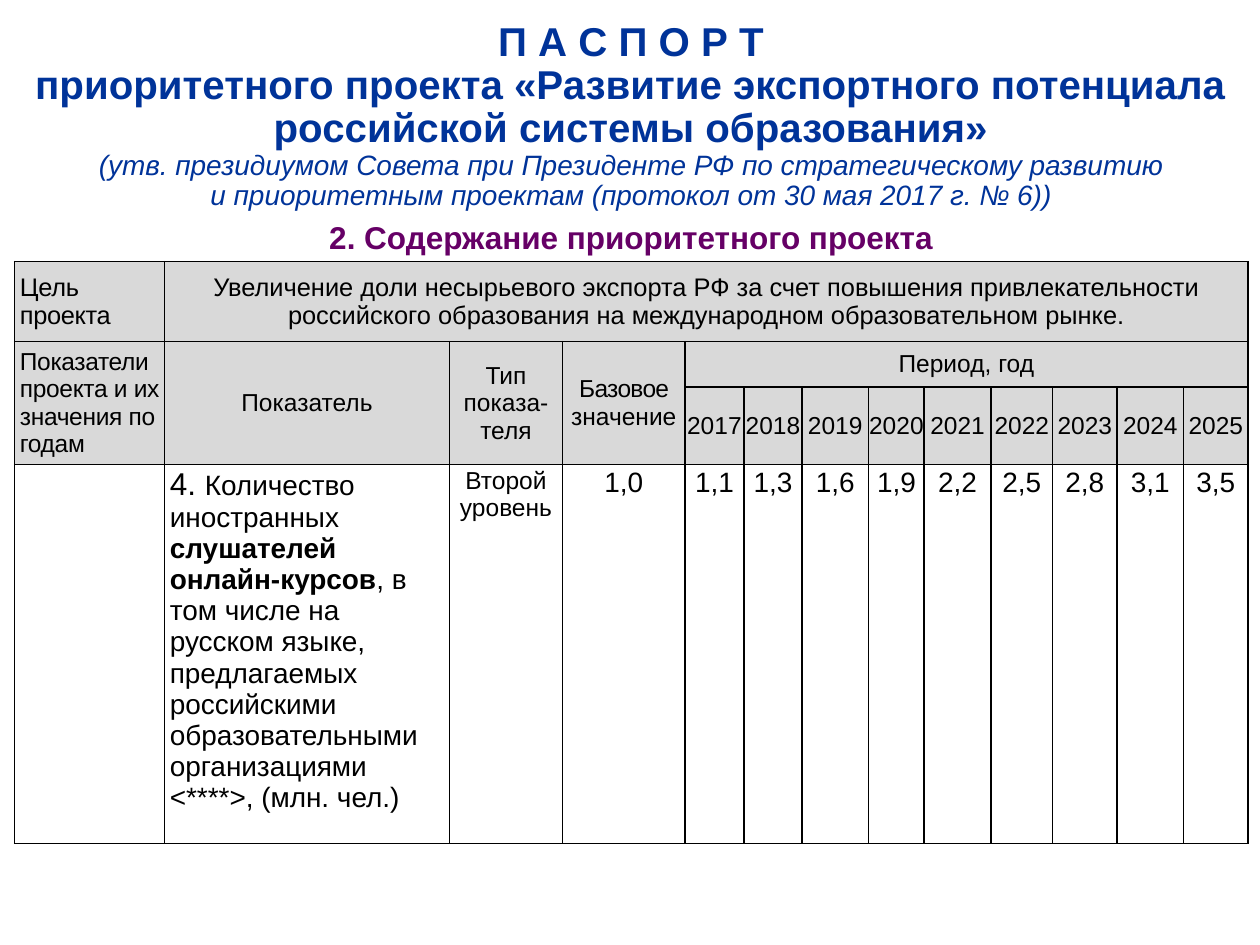
from lxml import etree
from pptx import Presentation
from pptx import util as u
from pptx.dml.color import RGBColor
from pptx.enum import text
from pptx.oxml import ns

Pt = u.Pt
BLUE = RGBColor(0x00, 0x33, 0x99)
PURPLE = RGBColor(0x66, 0x00, 0x66)
BLACK = RGBColor(0x00, 0x00, 0x00)
GREY = RGBColor(0xD9, 0xD9, 0xD9)
LEFT, CENTER = text.PP_ALIGN.LEFT, text.PP_ALIGN.CENTER
TOP, MIDDLE = text.MSO_ANCHOR.TOP, text.MSO_ANCHOR.MIDDLE

HEADING = dict(size=Pt(23), bold=True)
APPROVAL = dict(size=Pt(16), italic=True)
SECTION = dict(size=Pt(18), bold=True)
TITLE = [
    ("П А С П О Р Т", HEADING, BLUE, 0),
    ("приоритетного проекта «Развитие экспортного потенциала российской системы образования»",
     HEADING, BLUE, 0),
    ("(утв. президиумом Совета при Президенте РФ по стратегическому развитию", APPROVAL, BLUE, 0),
    ("и приоритетным проектам (протокол от 30 мая 2017 г. № 6))", APPROVAL, BLUE, 0),
    ("2. Содержание приоритетного проекта", SECTION, PURPLE, 6),
]

COLUMNS = [85.7, 162.7, 64.8, 69.8, 33.8, 33.1, 38.2, 31.7, 38.2, 35.3, 36.7, 38.2, 36.7]
ROWS = [45.7, 25.9, 40.2, 200.5]
FIRST_YEAR_COL = 4
YEARS = range(2017, 2026)
VALUES = ["1,1", "1,3", "1,6", "1,9", "2,2", "2,5", "2,8", "3,1", "3,5"]
INDICATOR = [
    ("4. ", dict(size=Pt(18))),
    ("Количество иностранных ", dict(size=Pt(16))),
    ("слушателей онлайн-курсов", dict(size=Pt(16), bold=True)),
    (", в том числе на русском языке, предлагаемых российскими образовательными "
     "организациями <****>, (млн. чел.)", dict(size=Pt(16))),
]


def add_run(p, words, color, fmt, spacing=0):
    r = p.add_run()
    r.text = words
    r.font.name = "Arial"
    r.font.color.rgb = color
    for name, value in fmt.items():
        setattr(r.font, name, value)
    if spacing:
        r.font._element.set("spc", str(round(spacing * 100)))


def add_title(s, x, y, w, h):
    tf = s.shapes.add_textbox(Pt(x), Pt(y), Pt(w), Pt(h)).text_frame
    tf.word_wrap = True
    for i, (words, fmt, color, before) in enumerate(TITLE):
        p = tf.add_paragraph() if i else tf.paragraphs[0]
        p.alignment, p.line_spacing, p.space_before = CENTER, 0.9, Pt(before)
        add_run(p, words, color, fmt)


def add_borders(cell):
    tc_pr = cell._tc.get_or_add_tcPr()
    for i, side in enumerate(("a:lnL", "a:lnR", "a:lnT", "a:lnB")):
        ln = etree.Element(ns.qn(side), w=str(Pt(1)))
        fill = etree.SubElement(ln, ns.qn("a:solidFill"))
        etree.SubElement(fill, ns.qn("a:srgbClr"), val=str(BLACK))
        tc_pr.insert(i, ln)


def fill_cell(cell, runs, align=CENTER, anchor=MIDDLE, left=0, right=0, pad=1.5):
    """Runs are (words, font format[, letter spacing])."""
    margins = dict(margin_left=left, margin_right=right, margin_top=pad, margin_bottom=pad)
    for name, value in margins.items():
        setattr(cell, name, Pt(value))
    cell.vertical_anchor = anchor
    p = cell.text_frame.paragraphs[0]
    p.alignment = align
    for words, fmt, *spacing in runs:
        add_run(p, words, BLACK, fmt, *spacing)


def add_indicator_table(s, x, y):
    tbl = s.shapes.add_table(len(ROWS), len(COLUMNS), Pt(x), Pt(y),
                             Pt(sum(COLUMNS)), Pt(sum(ROWS))).table
    tbl.first_row = tbl.horz_banding = False
    for col, w in zip(tbl.columns, COLUMNS):
        col.width = Pt(w)
    for i, (row, h) in enumerate(zip(tbl.rows, ROWS)):
        row.height = Pt(h)
        for cell in row.cells:
            if i < 3:
                cell.fill.solid()
                cell.fill.fore_color.rgb = GREY
            else:
                cell.fill.background()
            add_borders(cell)

    last = len(COLUMNS) - 1
    tbl.cell(0, 1).merge(tbl.cell(0, last))
    tbl.cell(1, FIRST_YEAR_COL).merge(tbl.cell(1, last))
    for c in range(FIRST_YEAR_COL):
        tbl.cell(1, c).merge(tbl.cell(2, c))

    goal, head, value = (dict(size=Pt(n)) for n in (14.5, 14, 16))
    fill_cell(tbl.cell(0, 0), [("Цель проекта", goal, -0.2)], LEFT, left=3)
    fill_cell(tbl.cell(0, 1), [("Увеличение доли несырьевого экспорта РФ за счет повышения "
                                "привлекательности российского образования на международном "
                                "образовательном рынке.", goal)])
    fill_cell(tbl.cell(1, 0), [("Показатели проекта и их значения по годам", head, -0.2)],
              LEFT, left=3)
    fill_cell(tbl.cell(1, 1), [("Показатель", head)], left=3, right=3)
    fill_cell(tbl.cell(1, 2), [("Тип показа-теля", head)])
    fill_cell(tbl.cell(1, 3), [("Базовое ", head, -0.4), ("значение", head)])
    fill_cell(tbl.cell(1, FIRST_YEAR_COL), [("Период, год", head)], left=3, right=3, pad=3)

    fill_cell(tbl.cell(3, 1), INDICATOR, LEFT, TOP, left=3, right=3)
    fill_cell(tbl.cell(3, 2), [("Второй уровень", head)], anchor=TOP)
    fill_cell(tbl.cell(3, 3), [("1,0", value)], anchor=TOP, left=3, right=3)
    for c, (year, amount) in enumerate(zip(YEARS, VALUES), FIRST_YEAR_COL):
        fill_cell(tbl.cell(2, c), [(str(year), head)])
        fill_cell(tbl.cell(3, c), [(amount, value)], anchor=TOP)


def main():
    prs = Presentation()
    prs.slide_width, prs.slide_height = Pt(720), Pt(540)
    s = prs.slides.add_slide(prs.slide_layouts[6])
    add_title(s, 0.7, 8.6, 720, 79)
    add_indicator_table(s, 8.4, 149.5)
    prs.save("out.pptx")


if __name__ == "__main__":
    main()
